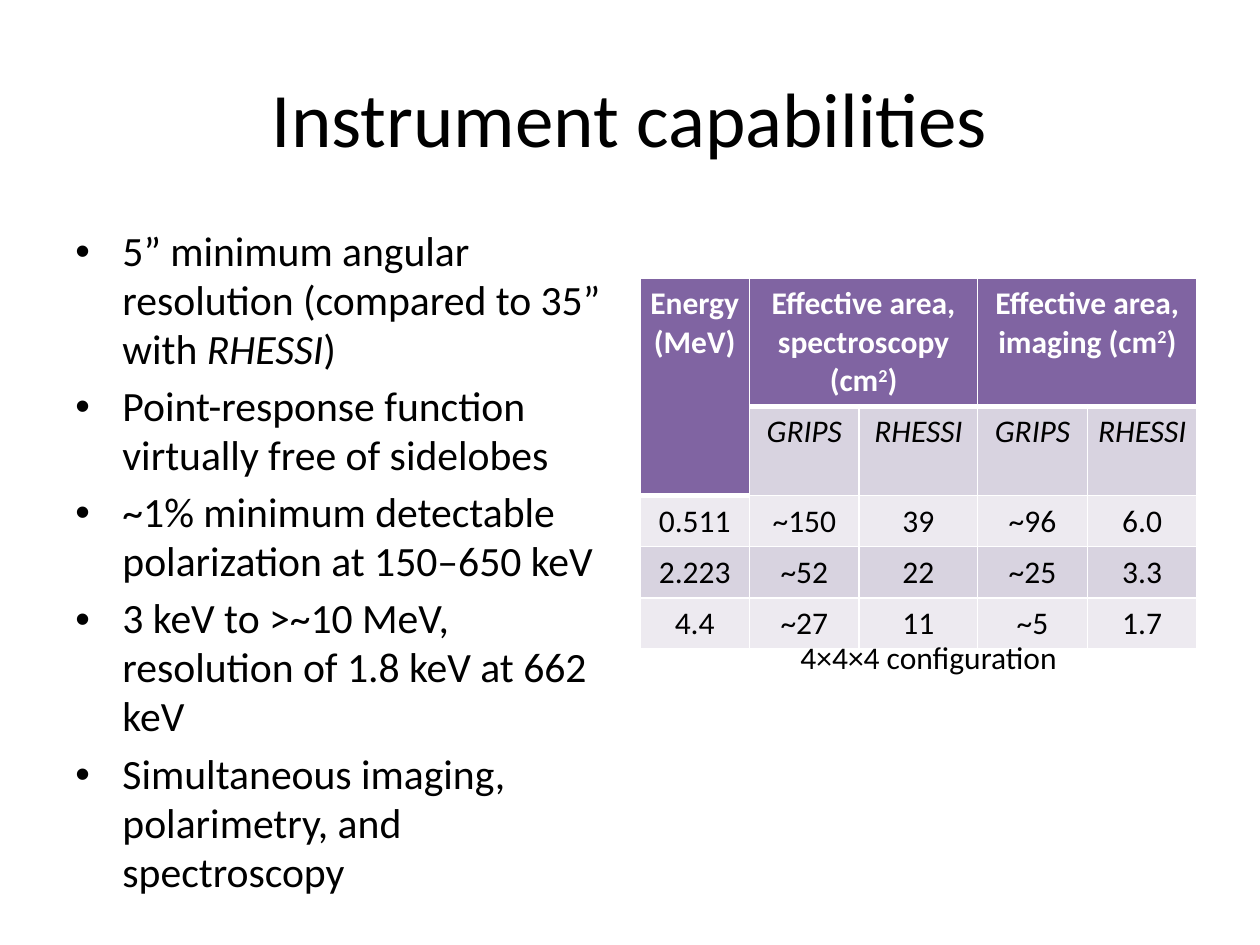
"""Build the instrument capabilities slide."""
from dataclasses import dataclass

import pptx
import pptx.dml.color
import pptx.enum.text
import pptx.oxml
import pptx.oxml.ns
import pptx.util
from pptx.util import Cm

CENTER = pptx.enum.text.PP_ALIGN.CENTER
MIDDLE = pptx.enum.text.MSO_ANCHOR.MIDDLE
HEADER, BAND, LIGHT = "8064A2", "D8D3E0", "EDEAF0"
BLACK, WHITE = "000000", "FFFFFF"


@dataclass(frozen=True)
class Run:
    text: str
    italic: bool = False
    superscript: bool = False


@dataclass(frozen=True)
class Style:
    size: float
    color: str = BLACK
    bold: bool = False


@dataclass(frozen=True)
class Header:
    row: int
    col: int
    end_row: int
    end_col: int
    runs: tuple[Run, ...]


BULLETS = (
    (Run("5” minimum angular resolution (compared to 35” with "),
     Run("RHESSI", italic=True), Run(")")),
    (Run("Point-response function virtually free of sidelobes"),),
    (Run("~1% minimum detectable polarization at 150–650 keV"),),
    (Run("3 keV to >~10 MeV, resolution of 1.8 keV at 662 keV"),),
    (Run("Simultaneous imaging, polarimetry, and spectroscopy"),),
)
SQUARED = (Run("2", superscript=True), Run(")"))
HEADERS = (
    Header(0, 0, 1, 0, (Run("Energy (MeV)"),)),
    Header(0, 1, 0, 2, (Run("Effective area, spectroscopy (cm"), *SQUARED)),
    Header(0, 3, 0, 4, (Run("Effective area, imaging (cm"), *SQUARED)),
)
INSTRUMENTS = ("GRIPS", "RHESSI", "GRIPS", "RHESSI")
VALUES = (
    ("0.511", "~150", "39", "~96", "6.0"),
    ("2.223", "~52", "22", "~25", "3.3"),
    ("4.4", "~27", "11", "~5", "1.7"),
)
COL_WIDTHS = (2.21, 2.21, 2.39, 2.21, 2.21)
ROW_HEIGHTS = (2.58, 1.8, 1.03, 1.03, 1.03)


def rgb(color: str) -> pptx.dml.color.RGBColor:
    """Turn a hex string into a colour."""
    return pptx.dml.color.RGBColor.from_string(color)


def add_runs(p, runs: tuple[Run, ...], style: Style) -> None:
    """Append styled runs to a paragraph."""
    for run in runs:
        r = p.add_run()
        r.text = run.text
        r.font.name = "Calibri"
        r.font.size = pptx.util.Pt(style.size)
        r.font.color.rgb = rgb(style.color)
        r.font.bold = style.bold
        r.font.italic = run.italic
        if run.superscript:
            r.font._element.set("baseline", "30000")


def add_box(s, left: float, top: float, width: float, height: float):
    """Add a wrapping text box and return its text frame."""
    sp = s.shapes.add_textbox(Cm(left), Cm(top), Cm(width), Cm(height))
    tf = sp.text_frame
    tf.word_wrap = True
    return tf


def add_line(tf, text: str, size: float) -> None:
    """Fill a text frame with one centred line."""
    p = tf.paragraphs[0]
    p.alignment = CENTER
    add_runs(p, (Run(text),), Style(size))


def add_bullets(tf, items: tuple[tuple[Run, ...], ...], style: Style) -> None:
    """Fill a text frame with a bulleted list."""
    for i, runs in enumerate(items):
        p = tf.paragraphs[0] if i == 0 else tf.add_paragraph()
        p.line_spacing = 0.98
        p.space_before = pptx.util.Pt(4.7)
        pPr = p._p.get_or_add_pPr()
        pPr.set("marL", str(Cm(0.95)))
        pPr.set("indent", str(-Cm(0.95)))
        ns = pptx.oxml.ns.nsdecls("a")
        pPr.append(pptx.oxml.parse_xml(f'<a:buFont {ns} typeface="Arial"/>'))
        pPr.append(pptx.oxml.parse_xml(f'<a:buChar {ns} char="•"/>'))
        add_runs(p, runs, style)


def format_cell(cell, fill: str, bottom: float = 1) -> None:
    """Set margins, white borders and fill of a cell."""
    cell.margin_left = cell.margin_right = Cm(0.13)
    cell.margin_top = cell.margin_bottom = Cm(0.13)
    tcPr = cell._tc.get_or_add_tcPr()
    for side, width in (("L", 1), ("R", 1), ("T", 1), ("B", bottom)):
        tcPr.append(pptx.oxml.parse_xml(
            f'<a:ln{side} {pptx.oxml.ns.nsdecls("a")} w="{pptx.util.Pt(width)}">'
            f'<a:solidFill><a:srgbClr val="{WHITE}"/></a:solidFill></a:ln{side}>'))
    cell.fill.solid()
    cell.fill.fore_color.rgb = rgb(fill)


def write_cell(cell, runs: tuple[Run, ...], style: Style) -> None:
    """Write centred runs into a cell."""
    p = cell.text_frame.paragraphs[0]
    p.alignment = CENTER
    add_runs(p, runs, style)


def add_area_table(s) -> None:
    """Add the table of effective areas."""
    table = s.shapes.add_table(
        len(ROW_HEIGHTS), len(COL_WIDTHS), Cm(12.9), Cm(5.61),
        Cm(sum(COL_WIDTHS)), Cm(sum(ROW_HEIGHTS))).table
    for col, width in zip(table.columns, COL_WIDTHS):
        col.width = Cm(width)
    for i, (row, height) in enumerate(zip(table.rows, ROW_HEIGHTS)):
        row.height = Cm(height)
        for j, cell in enumerate(row.cells):
            is_header = i == 0 or (i == 1 and j == 0)
            fill = HEADER if is_header else BAND if i % 2 else LIGHT
            format_cell(cell, fill, 3 if is_header else 1)
    for head in HEADERS:
        cell = table.cell(head.row, head.col)
        cell.merge(table.cell(head.end_row, head.end_col))
        write_cell(cell, head.runs, Style(18, WHITE, True))
    for j, name in enumerate(INSTRUMENTS, 1):
        write_cell(table.cell(1, j), (Run(name, italic=True),), Style(18))
    for i, values in enumerate(VALUES, 2):
        for j, value in enumerate(values):
            write_cell(table.cell(i, j), (Run(value),), Style(18))


def main() -> None:
    """Build and save the slide."""
    prs = pptx.Presentation()
    prs.slide_width, prs.slide_height = Cm(25.4), Cm(19.05)
    s = prs.slides.add_slide(prs.slide_layouts[6])
    title = add_box(s, 1.27, 0.76, 22.86, 3.18)
    title.vertical_anchor = MIDDLE
    add_line(title, "Instrument capabilities", 44)
    add_bullets(add_box(s, 1.27, 4.45, 11.23, 12.57), BULLETS, Style(23.8))
    add_area_table(s)
    add_line(add_box(s, 14.81, 12.73, 7.82, 1.02), "4×4×4 configuration", 18)
    prs.save("out.pptx")


if __name__ == "__main__":
    main()
